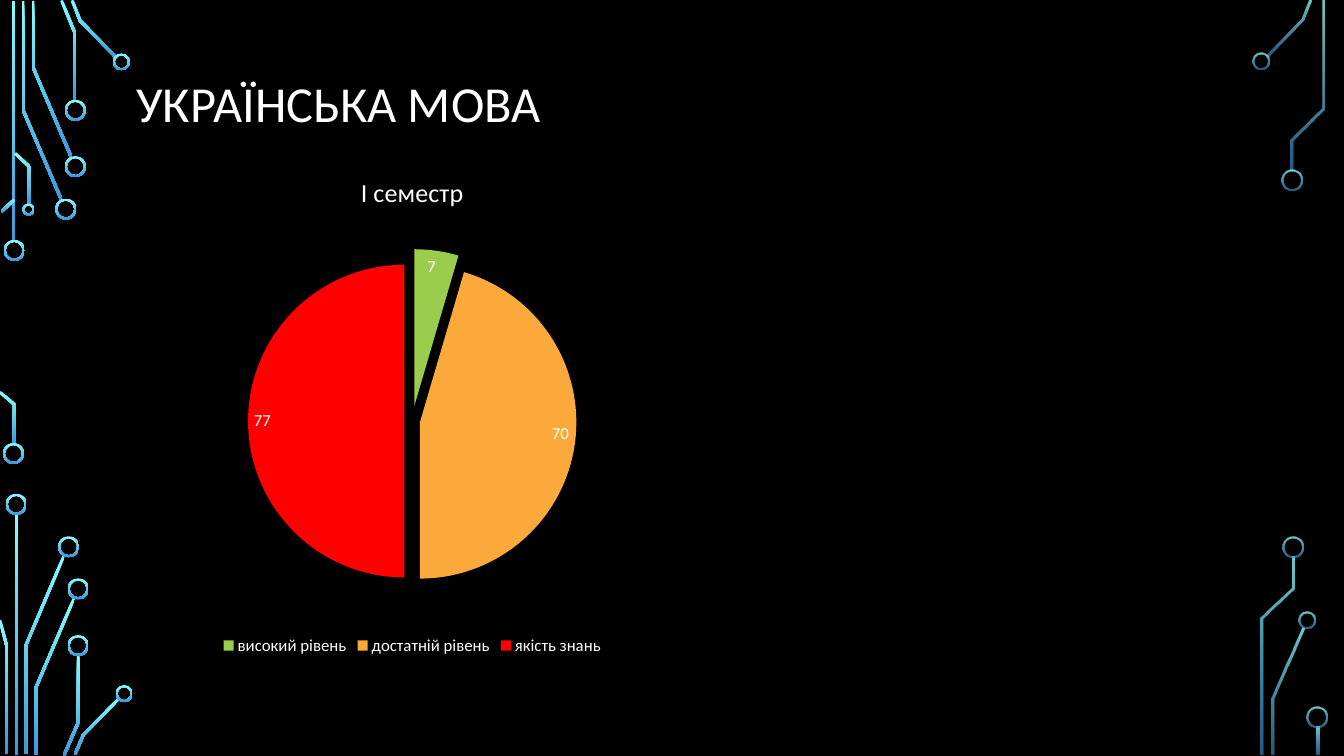
from math import hypot

from pptx import Presentation
from pptx.chart.data import CategoryChartData
from pptx.dml.color import RGBColor
from pptx.enum.chart import XL_CHART_TYPE, XL_LABEL_POSITION, XL_LEGEND_POSITION
from pptx.enum.shapes import MSO_SHAPE
from pptx.enum.text import MSO_ANCHOR, PP_ALIGN
from pptx.oxml import parse_xml
from pptx.oxml.ns import nsdecls, qn
from pptx.util import Cm, Pt

PIE = XL_CHART_TYPE.PIE
INSIDE_END = XL_LABEL_POSITION.INSIDE_END
BOTTOM = XL_LEGEND_POSITION.BOTTOM
DONUT = MSO_SHAPE.DONUT
MIDDLE = MSO_ANCHOR.MIDDLE
LEFT = PP_ALIGN.LEFT

BLACK = RGBColor(0x00, 0x00, 0x00)
WHITE = RGBColor(0xFF, 0xFF, 0xFF)
CYAN = RGBColor(0x82, 0xFF, 0xFF)
BLUE = RGBColor(0x3D, 0x97, 0xDE)
GREEN = RGBColor(0x9A, 0xCD, 0x4C)
ORANGE = RGBColor(0xFA, 0xA9, 0x3A)
RED = RGBColor(0xFF, 0x00, 0x00)

FONT = "Calibri"
TRACK_WIDTH = 0.07
RING_WIDTH = 0.05
LARGE, MEDIUM, SMALL = 0.53, 0.43, 0.31

LEFT_TRACKS = [
    [(0.34, 0.02), (0.34, 6.1)],
    [(0.58, 0.02), (0.58, 2.77), (1.55, 5.04)],
    [(0.83, 0.02), (0.83, 1.69), (1.8, 3.97)],
    [(1.55, 0.01), (1.89, 0.84), (1.89, 2.54)],
    [(1.82, 0.01), (2.02, 0.52), (2.93, 1.45)],
    [(0.04, 5.33), (0.36, 5.03)],
    [(0, 9.88), (0.36, 10.19), (0.36, 11.2)],
    [(0.38, 3.86), (0.74, 4.2), (0.74, 5.16)],
    [(0.42, 12.95), (0.42, 19.02)],
    [(0.65, 19), (0.65, 16.27), (1.61, 14.01)],
    [(0, 15.63), (0.17, 16.28), (0.17, 19)],
    [(0.9, 19.02), (0.9, 17.34), (1.87, 15.07)],
    [(1.61, 19.04), (1.97, 18.21), (1.97, 16.51)],
    [(1.89, 19.01), (2.1, 18.52), (3, 17.6)],
]
LEFT_RINGS = [
    (0.36, 6.31, LARGE), (0.34, 11.43, LARGE), (1.66, 5.27, LARGE),
    (1.9, 4.2, LARGE), (1.9, 2.78, LARGE), (3.06, 1.56, MEDIUM),
    (0.72, 5.28, SMALL), (0.41, 12.71, LARGE), (1.73, 13.78, LARGE),
    (1.97, 14.84, LARGE), (1.97, 16.27, LARGE), (3.13, 17.48, MEDIUM),
]
RIGHT_TRACKS = [
    [(33.03, 0.01), (32.83, 0.5), (31.93, 1.41)],
    [(32.07, 19.02), (32.07, 17.61), (32.84, 15.84)],
    [(33.34, 0.02), (33.34, 2.73), (32.56, 3.52), (32.56, 4.29)],
    [(31.81, 19.02), (31.81, 15.58), (32.6, 14.82), (32.6, 14.02)],
    [(33.21, 18.31), (33.21, 19.02)],
]
RIGHT_RINGS = [
    (31.79, 1.54, MEDIUM), (32.57, 4.54, LARGE), (32.93, 15.63, MEDIUM),
    (32.59, 13.78, LARGE), (33.18, 18.08, LARGE),
]
LEVELS = [
    ("високий рівень", 7, GREEN, 10),
    ("достатній рівень", 70, ORANGE, 5),
    ("якість знань", 77, RED, 5),
]


def style_font(font, size, color=WHITE):
    font.name = FONT
    font.size = Pt(size)
    font.bold = False
    font.color.rgb = color


def paint(shape, opacities):
    shape.shadow.inherit = False
    shape.line.fill.background()
    shape.fill.gradient()
    shape.fill.gradient_angle = 270
    stops = shape.fill.gradient_stops
    for stop, color, position in zip(stops, (CYAN, BLUE), (0, 1)):
        stop.color.rgb = color
        stop.position = position
    for tint, opacity in zip(shape._element.spPr.iter(qn("a:srgbClr")), opacities):
        if opacity < 100:
            tint.append(parse_xml(f'<a:alpha {nsdecls("a")} val="{opacity * 1000}"/>'))


def ribbon(points, width):
    normals = []
    for (x1, y1), (x2, y2) in zip(points, points[1:]):
        length = hypot(x2 - x1, y2 - y1)
        normals.append(((y1 - y2) / length, (x2 - x1) / length))
    near, far = [], []
    joints = zip(points, normals[:1] + normals, normals + normals[-1:])
    for (x, y), (ax, ay), (bx, by) in joints:
        scale = width / 2 / (1 + ax * bx + ay * by)
        dx, dy = (ax + bx) * scale, (ay + by) * scale
        near.append((Cm(x + dx), Cm(y + dy)))
        far.append((Cm(x - dx), Cm(y - dy)))
    return near + far[::-1]


def add_track(page, points, opacities):
    outline = ribbon(points, TRACK_WIDTH)
    builder = page.shapes.build_freeform(*outline[0])
    builder.add_line_segments(outline[1:], close=True)
    paint(builder.convert_to_shape(), opacities)


def add_ring(page, x, y, size, opacities):
    corner = Cm(x - size / 2), Cm(y - size / 2)
    ring = page.shapes.add_shape(DONUT, *corner, Cm(size), Cm(size))
    ring.adjustments[0] = RING_WIDTH / size
    paint(ring, opacities)


def add_circuit(page, tracks, rings, opacities):
    for points in tracks:
        add_track(page, points, opacities)
    for x, y, size in rings:
        add_ring(page, x, y, size, opacities)


def set_title(page, text, size):
    title = page.shapes.title
    title.left, title.top = Cm(3.18), Cm(0.61)
    title.width, title.height = Cm(27.51), Cm(4.11)
    frame = title.text_frame
    frame.vertical_anchor = MIDDLE
    para = frame.paragraphs[0]
    para.alignment = LEFT
    para.line_spacing = 0.9
    span = para.add_run()
    span.text = text
    style_font(span.font, size)


def explosion(percent):
    return parse_xml(f'<c:explosion {nsdecls("c")} val="{percent}"/>')


def add_pie(page, name, levels):
    data = CategoryChartData()
    data.categories = [label for label, *rest in levels]
    data.add_series(name, [value for label, value, *rest in levels])
    frame = page.shapes.add_chart(PIE, Cm(1.32), Cm(3.89), Cm(18.14), Cm(12.73), data)
    chart = frame.chart
    style_font(chart.font, 10)
    chart.has_title = True
    span = chart.chart_title.text_frame.paragraphs[0].add_run()
    span.text = name
    style_font(span.font, 18.6)
    chart.chart_title.include_in_layout = False
    chart.has_legend = True
    chart.legend.position = BOTTOM
    chart.legend.include_in_layout = False
    style_font(chart.legend.font, 12)

    plot = chart.plots[0]
    plot.vary_by_categories = True
    series = plot.series[0]
    for index, (label, value, color, offset) in enumerate(levels):
        fill = series.points[index].format.fill
        fill.solid()
        fill.fore_color.rgb = color
        slice_xml = series._element.findall(qn("c:dPt"))[index]
        slice_xml.find(qn("c:spPr")).addprevious(explosion(offset))
    series._element.find(qn("c:dPt")).addprevious(explosion(21))
    labels = series.data_labels
    labels.show_value = True
    labels.position = INSIDE_END
    style_font(labels.font, 12)


def main():
    deck = Presentation()
    deck.slide_width, deck.slide_height = Cm(33.87), Cm(19.05)
    page = deck.slides.add_slide(deck.slide_layouts[5])
    page.background.fill.solid()
    page.background.fill.fore_color.rgb = BLACK
    add_circuit(page, LEFT_TRACKS, LEFT_RINGS, (100, 100))
    add_circuit(page, RIGHT_TRACKS, RIGHT_RINGS, (80, 60))
    set_title(page, "УКРАЇНСЬКА МОВА", 36)
    add_pie(page, "І семестр", LEVELS)
    deck.save("out.pptx")


if __name__ == "__main__":
    main()
